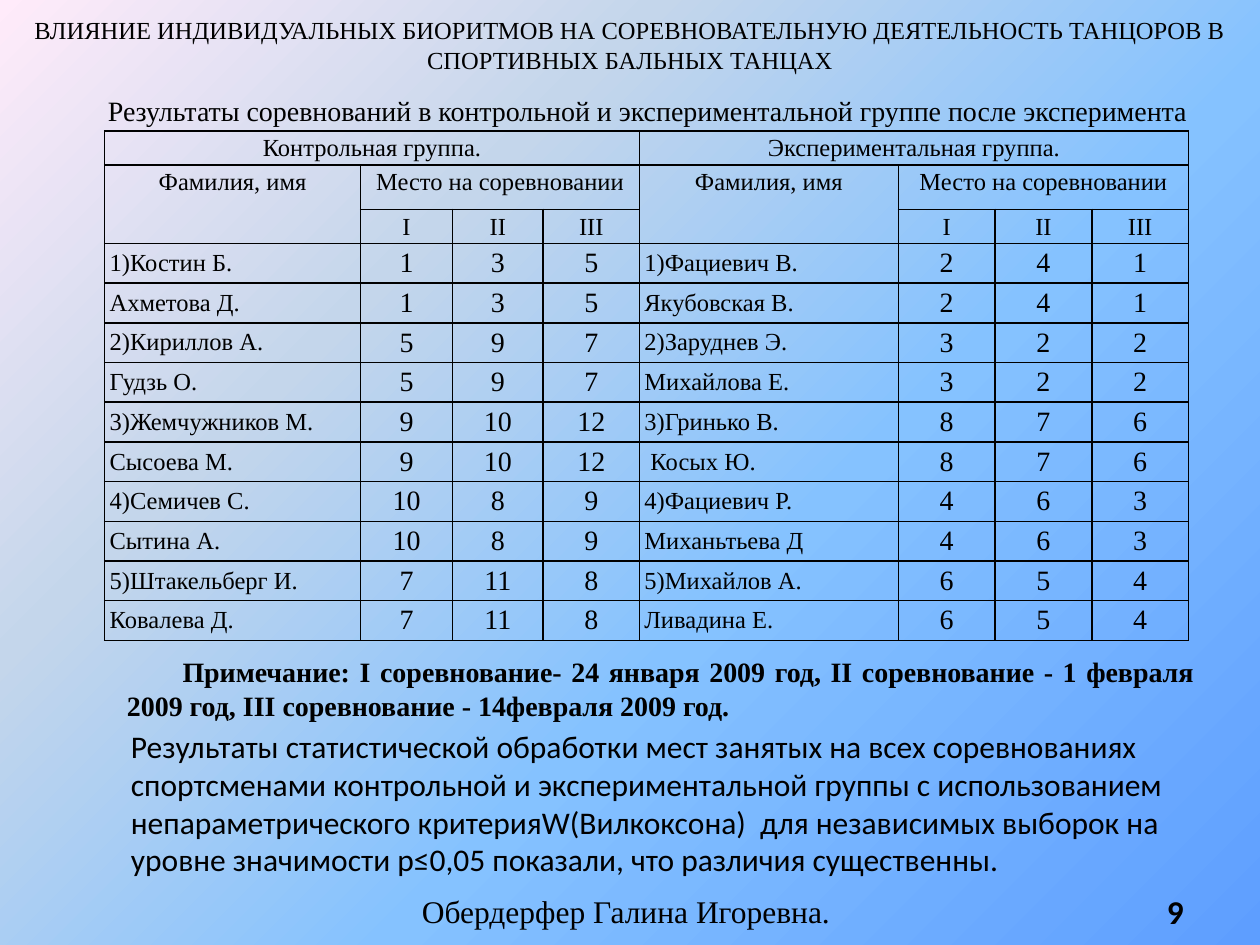
from pptx import Presentation
from pptx import util as u
from pptx.dml.color import RGBColor
from pptx.enum import text
from pptx.oxml import parse_xml
from pptx.oxml.ns import nsdecls

SERIF, SANS = "Times New Roman", "Calibri"
BLACK = "000000"
LEFT, CENTER, RIGHT, JUSTIFY = (text.PP_ALIGN.LEFT, text.PP_ALIGN.CENTER,
                                text.PP_ALIGN.RIGHT, text.PP_ALIGN.JUSTIFY)
TOP, MIDDLE = text.MSO_ANCHOR.TOP, text.MSO_ANCHOR.MIDDLE

GRADIENT = [(0, "5E9EFF"), (40, "85C2FF"), (70, "C4D6EB"), (100, "FFEBFA")]
COLUMNS = [5.16, 1.85, 1.83, 1.94, 5.22, 1.95, 1.95, 1.95]
HEADER_ROWS, BODY_ROW = [0.69, 0.89, 0.69], 0.8
GROUPS = ["Контрольная группа.", "Экспериментальная группа."]
# Each pair of dancers shares the places taken in the three contests
CONTROL = [
    ("1)Костин Б.", "Ахметова Д.", (1, 3, 5)),
    ("2)Кириллов А.", "Гудзь О.", (5, 9, 7)),
    ("3)Жемчужников М.", "Сысоева М.", (9, 10, 12)),
    ("4)Семичев С.", "Сытина А.", (10, 8, 9)),
    ("5)Штакельберг И.", "Ковалева Д.", (7, 11, 8)),
]
EXPERIMENTAL = [
    ("1)Фациевич В.", "Якубовская В.", (2, 4, 1)),
    ("2)Заруднев Э.", "Михайлова Е.", (3, 2, 2)),
    ("3)Гринько В.", " Косых Ю.", (8, 7, 6)),
    ("4)Фациевич Р.", "Миханьтьева Д", (4, 6, 3)),
    ("5)Михайлов А.", "Ливадина Е.", (6, 5, 4)),
]


def color(value):
    return RGBColor.from_string(value)


def style(p, size, font=SERIF, align=LEFT, bold=False):
    p.alignment = align
    p.font.size, p.font.name, p.font.bold = u.Pt(size), font, bold
    p.font.color.rgb = color(BLACK)


def add_background(s):
    stops = "".join(f'<a:gs pos="{pos * 1000}"><a:srgbClr val="{c}"/></a:gs>'
                    for pos, c in GRADIENT)
    s.element.cSld.insert(0, parse_xml(
        f'<p:bg {nsdecls("p", "a")}><p:bgPr><a:gradFill rotWithShape="1">'
        f'<a:gsLst>{stops}</a:gsLst><a:lin ang="{225 * 60000}" scaled="0"/>'
        '</a:gradFill><a:effectLst/></p:bgPr></p:bg>'))


def add_text(s, box, lines, size, font=SERIF, align=LEFT, bold=False,
             anchor=TOP, indent=0, wrap=True):
    tf = s.shapes.add_textbox(*map(u.Cm, box)).text_frame
    tf.word_wrap, tf.vertical_anchor = wrap, anchor
    for i, line in enumerate(lines):
        p = tf.add_paragraph() if i else tf.paragraphs[0]
        p.text = line
        style(p, size, font, align, bold)
        if indent:
            p._p.get_or_add_pPr().set("indent", str(u.Cm(indent)))


def format_cell(cell):
    cell.margin_left = cell.margin_right = u.Cm(0.1)
    cell.margin_top = cell.margin_bottom = 0
    cell.fill.background()
    tcPr = cell._tc.get_or_add_tcPr()
    for i, side in enumerate("LRTB"):
        tcPr.insert(i, parse_xml(
            f'<a:ln{side} {nsdecls("a")} w="{u.Pt(1)}"><a:solidFill>'
            f'<a:srgbClr val="{BLACK}"/></a:solidFill></a:ln{side}>'))


def add_header(table, col, group):
    def put(row, column, label):
        p = table.cell(row, column).text_frame.paragraphs[0]
        p.text, p.line_spacing = label, 1.15
        style(p, 14, align=CENTER)

    table.cell(0, col).merge(table.cell(0, col + 3))
    table.cell(1, col).merge(table.cell(2, col))
    table.cell(1, col + 1).merge(table.cell(1, col + 3))
    put(0, col, group)
    put(1, col, "Фамилия, имя")
    put(1, col + 1, "Место на соревновании")
    for i, contest in enumerate(["I", "II", "III"], 1):
        put(2, col + i, contest)


def add_pairs(table, col, pairs):
    dancers = [(name, *places) for *names, places in pairs for name in names]
    for row, values in enumerate(dancers, len(HEADER_ROWS)):
        for i, value in enumerate(values):
            cell = table.cell(row, col + i)
            cell.vertical_anchor = MIDDLE
            p = cell.text_frame.paragraphs[0]
            p.text = str(value)
            style(p, 16 if i else 14, align=CENTER if i else LEFT)


def add_results(s, left, top):
    heights = HEADER_ROWS + [BODY_ROW] * 2 * len(CONTROL)
    table = s.shapes.add_table(
        len(heights), len(COLUMNS), u.Cm(left), u.Cm(top),
        u.Cm(sum(COLUMNS)), u.Cm(sum(heights))).table
    table.first_row = table.horz_banding = False
    for column, width in zip(table.columns, COLUMNS):
        column.width = u.Cm(width)
    for row, height in zip(table.rows, heights):
        row.height = u.Cm(height)
    for cell in table.iter_cells():
        format_cell(cell)
    for i, pairs in enumerate([CONTROL, EXPERIMENTAL]):
        add_header(table, 4 * i, GROUPS[i])
        add_pairs(table, 4 * i, pairs)


def add_footer(s, left, top, width, height):
    add_text(s, (left + 18.19, top, 5.92, height), ["9"], 19, SANS, RIGHT,
             bold=True, anchor=MIDDLE)
    add_text(s, (left, top, width, height), ["Обердерфер Галина Игоревна. "],
             18, align=CENTER, anchor=MIDDLE)


def add_headings(s, left, top, width):
    # Slide title, then the caption of the table
    add_text(s, (left, top, width, 1.45),
             ["ВЛИЯНИЕ ИНДИВИДУАЛЬНЫХ БИОРИТМОВ НА СОРЕВНОВАТЕЛЬНУЮ "
              "ДЕЯТЕЛЬНОСТЬ ТАНЦОРОВ В СПОРТИВНЫХ БАЛЬНЫХ ТАНЦАХ"],
             14, align=CENTER)
    add_text(s, (left, top + 1.57, width - 0.4, 0.94),
             ["Результаты соревнований в контрольной и экспериментальной "
              "группе после эксперимента"],
             16, align=CENTER, anchor=MIDDLE, indent=1.12)


def add_conclusions(s, left, top, width):
    # Dates of the contests, then the statistical result
    add_text(s, (left, top, width, 1.63),
             ["Примечание: I соревнование- 24 января 2009 год, "
              "II соревнование - 1 февраля 2009 год, "
              "III соревнование - 14февраля 2009 год."],
             16, align=JUSTIFY, bold=True, indent=1.12)
    add_text(s, (left + 0.08, top + 1.45, width - 0.33, 3.33),
             ["Результаты статистической обработки мест занятых на всех соревнованиях",
              "спортсменами контрольной и экспериментальной группы с использованием",
              "непараметрического критерияW(Вилкоксона)  для независимых выборок на",
              "уровне значимости p≤0,05 показали, что различия существенны."],
             18, SANS, wrap=False)


def main():
    prs = Presentation()
    prs.slide_width, prs.slide_height = u.Cm(25.4), u.Cm(19.05)
    s = prs.slides.add_slide(prs.slide_layouts[6])
    add_background(s)
    add_footer(s, 0, 17.86, 25.4, 1.02)
    add_headings(s, 0, 0.18, 25.4)
    add_results(s, 2.11, 2.64)
    add_conclusions(s, 2.31, 13.08, 22.02)
    prs.save("out.pptx")


if __name__ == "__main__":
    main()
